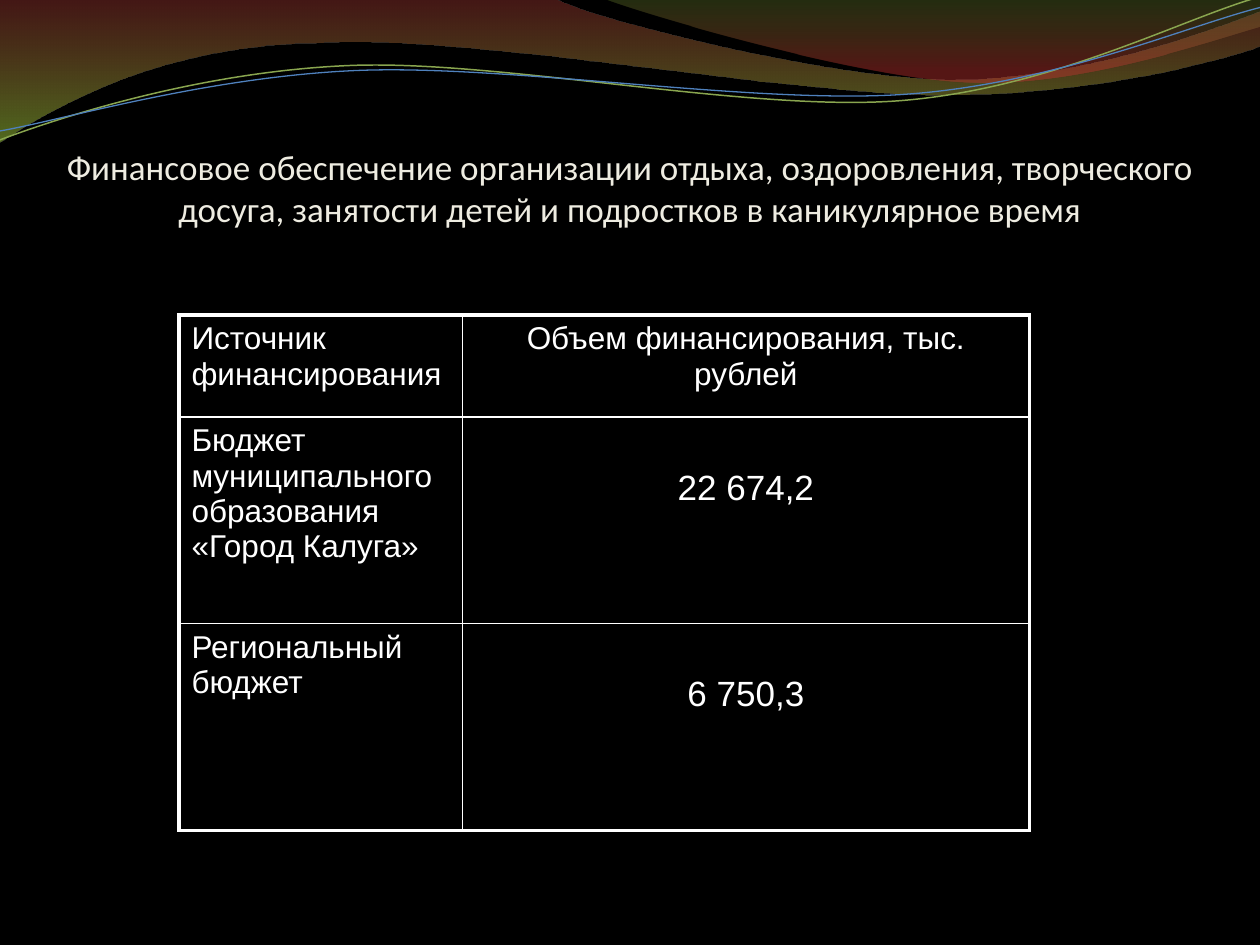
from itertools import product
from math import cos, radians, sin

from lxml.etree import SubElement
from pptx import Presentation
from pptx.dml.color import RGBColor
from pptx.enum.text import MSO_ANCHOR, MSO_AUTO_SIZE, PP_ALIGN
from pptx.oxml.ns import qn
from pptx.util import Inches, Pt

color = RGBColor.from_string
LINE_TILT = 2.7


def turn(point, center, degrees):
    """Rotate a point clockwise about a center."""
    dx, dy = point[0] - center[0], point[1] - center[1]
    c, s = cos(radians(degrees)), sin(radians(degrees))
    return center[0] + dx * c - dy * s, center[1] + dx * s + dy * c


def draw_outline(page, start, segments, center=None):
    """Draw lines (2 numbers) and Bezier curves (6 numbers); tilt the shape if it has a center."""
    points = [start] + [s[i:i + 2] for s in segments for i in range(0, len(s), 2)]
    if center:
        points = [turn(point, center, LINE_TILT) for point in points]
    points = [(Inches(x), Inches(y)) for x, y in points]
    builder = page.shapes.build_freeform(*points[0])
    builder.add_line_segments(points[1:], close=center is None)
    shape = builder.convert_to_shape()
    lines = iter(list(shape.element.iter(qn("a:lnTo"))))
    for segment in segments:
        curve = next(lines)
        if len(segment) == 6:
            curve.tag = qn("a:cubicBezTo")
            for extra in (next(lines), next(lines)):
                curve.append(extra[0])
                extra.getparent().remove(extra)
    shape.rotation = 360 - LINE_TILT if center else 0
    shape.shadow.inherit = False
    return shape


deck = Presentation()
deck.slide_width, deck.slide_height = Inches(10), Inches(7.5)
width, height = deck.slide_width, deck.slide_height
page = deck.slides.add_slide(deck.slide_layouts[5])
page.background.fill.solid()
page.background.fill.fore_color.rgb = color("000000")

# Filled waves along the top edge: stops are position, colour, opacity in percent
waves = [
    ((0, -0.01),
     [(4.4, -0.01), (4.76, 0.17, 6.64, 0.63, 7.58, 0.63),
      (8.53, 0.63, 9.58, 0.26, 10, 0.09), (10.01, 0.36),
      (9.83, 0.44, 8.7, 0.76, 7.46, 0.75), (6.22, 0.75, 3.82, 0.28, 2.57, 0.34),
      (1.29, 0.35, 0.46, 0.83, -0.01, 1.13), (0, -0.01)],
     [(0, "973330", 45), (1, "95C238", 55)]),
    ((4.79, -0.01),
     [(5.09, 0.11, 6.82, 0.62, 7.69, 0.65), (8.56, 0.69, 9.61, 0.32, 10, 0.21),
      (10, 0), (4.79, -0.01)],
     [(0, "769537", 30), (0.8, "BE3330", 45)]),
]
for start, segments, stops in waves:
    wave = draw_outline(page, start, segments)
    wave.line.fill.background()
    wave.fill.gradient()
    wave.fill.gradient_angle = 270
    for stop, (position, stop_color, _) in zip(wave.fill.gradient_stops, stops):
        stop.position = position
        stop.color.rgb = color(stop_color)
    for tint, (_, _, opacity) in zip(wave.element.iter(qn("a:srgbClr")), stops):
        SubElement(tint, qn("a:alpha"), val=str(opacity * 1000))

# Thin tilted lines over the waves
wave_lines = [
    ((0, 1.11),
     [(0.48, 0.93, 1.58, 0.57, 2.77, 0.52), (3.95, 0.47, 5.93, 0.89, 7.13, 0.8),
      (8.33, 0.71, 9.38, 0.15, 9.98, -0.02)],
     (4.99, 0.58), "89A54F", 0.85),
    ((0, 1.04),
     [(0.47, 0.96, 1.64, 0.61, 2.83, 0.56), (4.03, 0.51, 5.97, 0.83, 7.17, 0.75),
      (8.36, 0.67, 9.41, 0.21, 10, 0.06)],
     (5, 0.59), "4F81BD", 0.75),
]
for start, segments, center, line_color, line_width in wave_lines:
    wave_line = draw_outline(page, start, segments, center)
    wave_line.fill.background()
    wave_line.line.color.rgb = color(line_color)
    wave_line.line.width = Pt(line_width)

# Title, in front of the waves
title = page.shapes.title
title.element.getparent().append(title.element)
title_box = {"left": 0.05 * width, "top": 0.11 * height,
             "width": 0.9 * width, "height": height / 7.5}
for name, value in title_box.items():
    setattr(title, name, int(value))
frame = title.text_frame
frame_format = {"margin_left": 0, "margin_right": 0, "margin_top": Inches(0.05),
                "margin_bottom": 0, "word_wrap": True,
                "auto_size": MSO_AUTO_SIZE.NONE, "vertical_anchor": MSO_ANCHOR.BOTTOM}
for name, value in frame_format.items():
    setattr(frame, name, value)
frame.text = ("Финансовое обеспечение организации отдыха, оздоровления, "
              "творческого досуга, занятости детей и подростков в каникулярное время")
para = frame.paragraphs[0]
para.alignment = PP_ALIGN.CENTER
title_font = {"name": "Calibri", "size": Pt(20), "bold": False}
for name, value in title_font.items():
    setattr(para.runs[0].font, name, value)
para.runs[0].font.color.rgb = color("EEECE1")

# Funding table
rows = [
    ("Источник финансирования", "Объем финансирования, тыс. рублей"),
    ("Бюджет муниципального образования «Город Калуга»", "22 674,2"),
    ("Региональный бюджет", "6 750,3"),
]
column_widths, row_heights = (2.25, 4.5), (0.81, 1.64, 1.64)
table = page.shapes.add_table(len(rows), len(column_widths), int(0.142 * width),
                              int(height / 3), Inches(sum(column_widths)),
                              Inches(sum(row_heights))).table
table.first_row = table.horz_banding = False
for column, column_width in zip(table.columns, column_widths):
    column.width = Inches(column_width)
for row, row_height in zip(table.rows, row_heights):
    row.height = Inches(row_height)

last_row, last_column = len(rows) - 1, len(column_widths) - 1
for r, c in product(range(len(rows)), range(len(column_widths))):
    cell = table.cell(r, c)
    is_value = r > 0 and c > 0
    cell.text = rows[r][c]
    cell.vertical_anchor = MSO_ANCHOR.TOP
    cell.margin_top = Inches(0.41 if is_value else 0.05)
    para = cell.text_frame.paragraphs[0]
    para.alignment = PP_ALIGN.CENTER if c else PP_ALIGN.LEFT
    cell_font = {"name": "Arial", "size": Pt(20 if is_value else 18), "bold": False}
    for name, value in cell_font.items():
        setattr(para.runs[0].font, name, value)
    para.runs[0].font.color.rgb = color("FFFFFF")

    outer_edges = {"lnL": c == 0, "lnR": c == last_column, "lnT": r == 0, "lnB": r == last_row}
    properties = cell._tc.get_or_add_tcPr()
    for edge, is_outer in outer_edges.items():
        border = SubElement(properties, qn(f"a:{edge}"), w=str(Pt(2.25 if is_outer else 1)))
        SubElement(SubElement(border, qn("a:solidFill")), qn("a:srgbClr"), val="FFFFFF")
    cell.fill.background()

deck.save("out.pptx")
